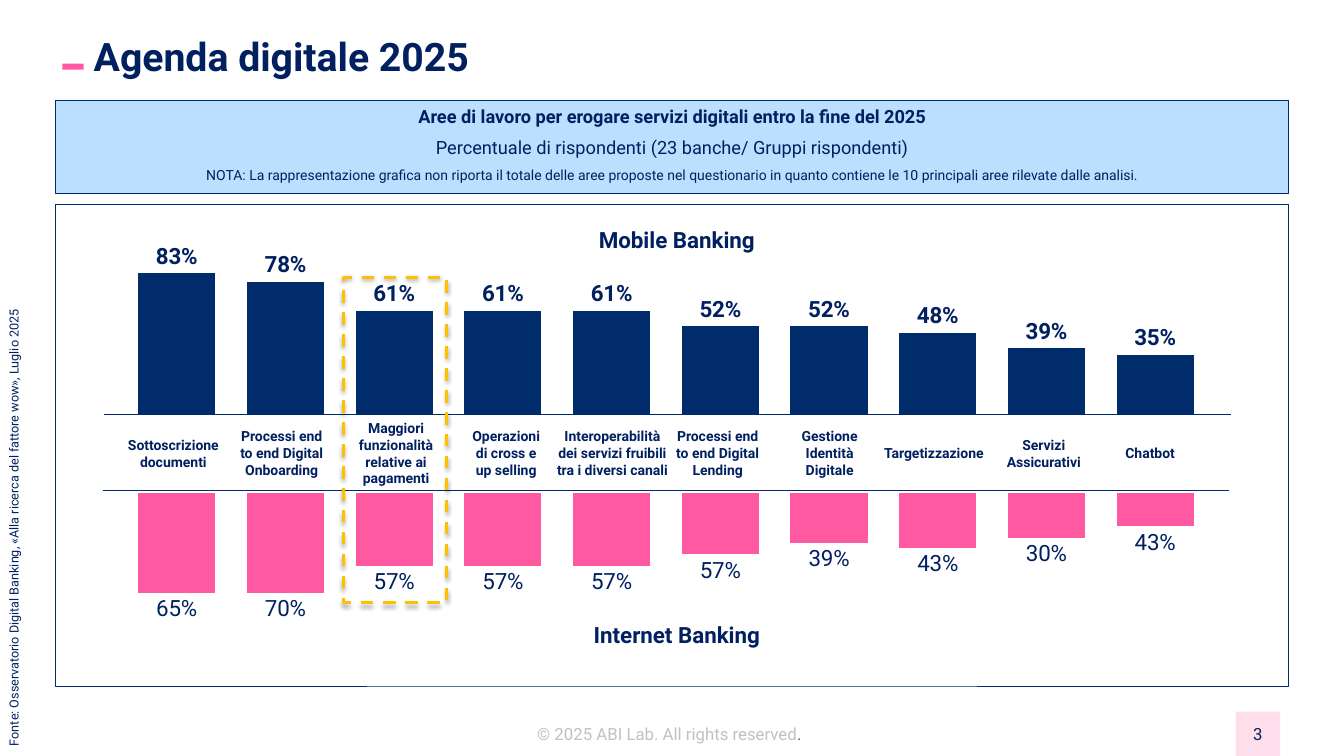
import pptx
import pptx.chart.data
import pptx.dml.color
import pptx.enum.chart
import pptx.enum.dml
import pptx.enum.shapes
import pptx.enum.text
import pptx.oxml
import pptx.oxml.ns
import pptx.util

Pt = pptx.util.Pt
ALIGN = pptx.enum.text.PP_ALIGN
ANCHOR = pptx.enum.text.MSO_ANCHOR
NAMESPACES = pptx.oxml.ns.nsdecls("a", "c")

NAVY, BAR_NAVY, PINK = "002060", "002C6C", "FF59A1"

AREAS = [
    ("Sottoscrizione documenti", 83.5, 80.6),
    ("Processi end to end Digital Onboarding", 163.4, 75.6),
    ("Maggiori funzionalità relative ai pagamenti", 239, 87.8),
    ("Operazioni di cross e up selling", 326.2, 70.6),
    ("Interoperabilità dei servizi fruibili tra i diversi canali", 389.5, 95.8),
    ("Processi end to end Digital Lending", 475.9, 73.4),
    ("Gestione Identità Digitale", 553.7, 77.8),
    ("Targetizzazione", 620.6, 92.9),
    ("Servizi Assicurativi", 709.2, 72.7),
    ("Chatbot", 794.9, 53.3),
]
MOBILE = [0.83, 0.78, 0.61, 0.61, 0.61, 0.52, 0.52, 0.48, 0.39, 0.35]
INTERNET = [-0.78, -0.78, -0.57, -0.57, -0.57, -0.48, -0.39, -0.43, -0.35, -0.26]
INTERNET_LABELS = ["65%", "70%", "57%", "57%", "57%", "57%", "39%", "43%", "30%", "43%"]


def color(value):
    return pptx.dml.color.RGBColor.from_string(value)


class SlideBuilder:
    font_name = "Roboto"

    def __init__(self, slide):
        self.slide = slide

    def style(self, font, size, ink=NAVY, bold=False):
        font.name = self.font_name
        font.size = Pt(size)
        font.bold = bold
        font.color.rgb = color(ink)

    def set_lines(self, frame, lines, align, anchor, gap=0):
        frame.word_wrap = True
        frame.vertical_anchor = anchor
        for index, (text, size, bold) in enumerate(lines):
            paragraph = frame.paragraphs[0] if index == 0 else frame.add_paragraph()
            paragraph.text = text
            paragraph.alignment = align
            if index:
                paragraph.space_before = Pt(gap)
            self.style(paragraph.font, size, bold=bold)

    def text(self, box, text, size, bold=False, align=ALIGN.LEFT, anchor=ANCHOR.TOP):
        shape = self.slide.shapes.add_textbox(*map(Pt, box))
        self.set_lines(shape.text_frame, [(text, size, bold)], align, anchor)
        return shape

    def rectangle(self, box, fill=None, line=None, width=0.75):
        kind = pptx.enum.shapes.MSO_SHAPE.RECTANGLE
        shape = self.slide.shapes.add_shape(kind, *map(Pt, box))
        shape.shadow.inherit = False
        if fill:
            shape.fill.solid()
            shape.fill.fore_color.rgb = color(fill)
        else:
            shape.fill.background()
        if line:
            shape.line.color.rgb = color(line)
            shape.line.width = Pt(width)
        else:
            shape.line.fill.background()
        return shape

    def highlight(self, box, line):
        shape = self.rectangle(box, line=line, width=2.25)
        shape.line.dash_style = pptx.enum.dml.MSO_LINE.DASH
        effects = shape._element.spPr.find(pptx.oxml.ns.qn("a:effectLst"))
        effects.append(pptx.oxml.parse_xml(
            f'<a:outerShdw {NAMESPACES} blurRad="{Pt(3.1)}" dist="{Pt(1.8)}" dir="5400000" '
            'rotWithShape="0"><a:srgbClr val="000000"><a:alpha val="35000"/></a:srgbClr>'
            '</a:outerShdw>'))

    def rule(self, left, right, y):
        kind = pptx.enum.shapes.MSO_CONNECTOR.STRAIGHT
        connector = self.slide.shapes.add_connector(kind, Pt(left), Pt(y), Pt(right), Pt(y))
        connector.line.color.rgb = color("002B6A")
        connector.line.width = Pt(0.75)
        connector._element.spPr.append(pptx.oxml.parse_xml(f"<a:effectLst {NAMESPACES}/>"))

    def columns(self, box, name, values, fill, limits, plot_height, captions=()):
        data = pptx.chart.data.CategoryChartData(number_format="0%")
        data.categories = [str(number) for number in range(1, len(values) + 1)]
        data.add_series(name, values)
        kind = pptx.enum.chart.XL_CHART_TYPE.COLUMN_CLUSTERED
        chart = self.slide.shapes.add_chart(kind, *map(Pt, box), data).chart
        chart.has_legend = False
        chart.has_title = False
        self.style(chart.font, 10, "000000")
        chart.category_axis.visible = False
        axis = chart.value_axis
        axis.visible = False
        axis.has_major_gridlines = False
        axis.minimum_scale, axis.maximum_scale = limits

        plot = chart.plots[0]
        plot.gap_width = 41
        plot.vary_by_categories = False
        series = plot.series[0]
        series.invert_if_negative = False
        series.format.fill.solid()
        series.format.fill.fore_color.rgb = color(fill)
        outside = pptx.enum.chart.XL_LABEL_POSITION.OUTSIDE_END
        labels = series.data_labels
        labels.show_value = True
        labels.number_format = "0%"
        labels.number_format_is_linked = False
        labels.position = outside
        self.style(labels.font, 16, bold=True)
        for index, caption in enumerate(captions):
            label = series.points[index].data_label
            run = label.text_frame.paragraphs[0].add_run()
            run.text = caption
            self.style(run.font, 16)
            label.position = outside
        self.place_plot(chart, plot_height)

    def place_plot(self, chart, height):
        area = chart._chartSpace.chart.plotArea
        for layout in area.findall(pptx.oxml.ns.qn("c:layout")):
            area.remove(layout)
        places = {"x": 0.005, "y": 0.118, "w": 0.995, "h": height}
        sizes = "".join(f'<c:{key} val="{value}"/>' for key, value in places.items())
        area.insert(0, pptx.oxml.parse_xml(
            f'<c:layout {NAMESPACES}><c:manualLayout><c:layoutTarget val="inner"/>'
            f'<c:xMode val="edge"/><c:yMode val="edge"/>{sizes}</c:manualLayout></c:layout>'))


def main():
    presentation = pptx.Presentation()
    presentation.slide_width, presentation.slide_height = Pt(960), Pt(540)
    builder = SlideBuilder(presentation.slides.add_slide(presentation.slide_layouts[6]))

    builder.rectangle((44.6, 45.4, 15.1, 4.3), PINK)
    builder.text((59.8, 2.2, 694, 74.9), "Agenda digitale 2025", 28, True, anchor=ANCHOR.MIDDLE)

    banner = builder.rectangle((39.6, 72, 880.6, 66.2), "BADFFF", BAR_NAVY)
    builder.set_lines(banner.text_frame, [
        ("Aree di lavoro per erogare servizi digitali entro la fine del 2025", 13, True),
        ("Percentuale di rispondenti (23 banche/ Gruppi rispondenti)", 13, False),
        ("NOTA: La rappresentazione grafica non riporta il totale delle aree proposte nel "
         "questionario in quanto contiene le 10 principali aree rilevate dalle analisi.", 10, False),
    ], ALIGN.CENTER, ANCHOR.TOP, gap=6)

    builder.rectangle((39.6, 145.8, 880.6, 344.2), line=BAR_NAVY, width=0.5)
    for heading, top in (("Mobile Banking", 157.7), ("Internet Banking", 440)):
        builder.text((87.1, top, 792.7, 26.6), heading, 16, True, ALIGN.CENTER)
    builder.columns((83.5, 169.9, 780.5, 143.3), "Mobile Banking", MOBILE, BAR_NAVY,
                    (0, 0.9), 0.764)
    builder.columns((83.5, 339.1, 780.5, 110.2), "Internet Banking", INTERNET, PINK,
                    (-0.9, 0), 0.746, INTERNET_LABELS)
    for area, left, width in AREAS:
        builder.text((left, 296, width, 55.4), area, 10, True, ALIGN.CENTER, ANCHOR.MIDDLE)
    builder.rule(74.2, 879, 295.9)
    builder.rule(73.4, 877.7, 350.6)
    builder.highlight((245.5, 198, 73.4, 232.6), "FFC000")

    source = builder.text((-186.5, 334.8, 392.4, 18),
                          "Fonte: Osservatorio Digital Banking, "
                          "«Alla ricerca del fattore wow», Luglio 2025", 9)
    source.rotation = 270

    footer = builder.text((376.6, 513.4, 207.4, 21.6), "© 2025 ABI Lab. All rights reserved", 12)
    footer.text_frame.word_wrap = False
    paragraph = footer.text_frame.paragraphs[0]
    paragraph.add_run().text = "."
    for run, ink in zip(paragraph.runs, ("BCC2C8", "5D6671")):
        run.font.color.rgb = color(ink)

    page = builder.rectangle((882.7, 508.3, 31.7, 31.7), "FFDEEC")
    builder.set_lines(page.text_frame, [("3", 12, False)], ALIGN.CENTER, ANCHOR.MIDDLE)
    presentation.save("out.pptx")


if __name__ == "__main__":
    main()
